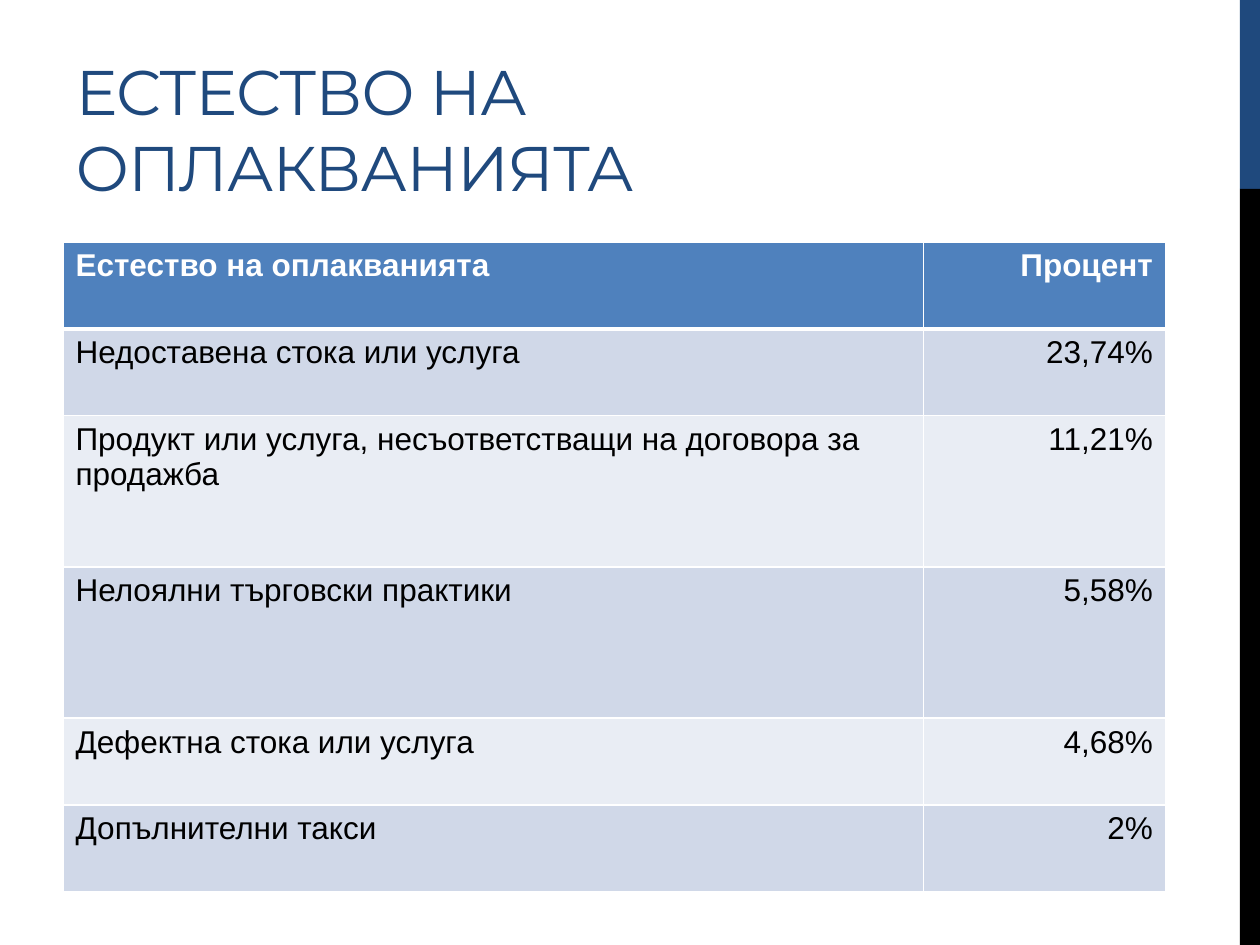
from lxml.etree import SubElement
from pptx import Presentation
from pptx.dml.color import RGBColor
from pptx.enum.shapes import MSO_SHAPE as Shape
from pptx.enum.text import MSO_ANCHOR as Anchor, MSO_AUTO_SIZE as AutoSize, PP_ALIGN as Align
from pptx.oxml.ns import qn
from pptx.util import Inches, Pt

NAVY, BLACK, WHITE = "1F497D", "000000", "FFFFFF"
HEADER, BANDS = "4F81BD", ("D0D8E8", "E9EDF4")
WIDTH, HEIGHT = 10, 7.5
COLUMNS = (6.83, 1.92)
SHORT, TALL = 0.69, 1.2
TITLE = "ЕСТЕСТВО НА ОПЛАКВАНИЯТА"
COMPLAINTS = (
    (SHORT, "Естество на оплакванията", "Процент"),
    (SHORT, "Недоставена стока или услуга", "23,74%"),
    (TALL, "Продукт или услуга, несъответстващи на договора за продажба", "11,21%"),
    (TALL, "Нелоялни търговски практики", "5,58%"),
    (SHORT, "Дефектна стока или услуга", "4,68%"),
    (SHORT, "Допълнителни такси", "2%"),
)


def paint(fill, color):
    fill.solid()
    fill.fore_color.rgb = RGBColor.from_string(color)


def set_font(para, name, size, color, bold=False):
    font = para.font
    font.name, font.size, font.bold = name, Pt(size), bold
    font.color.rgb = RGBColor.from_string(color)


def add_side_band(page, left, top, width, height):
    split = height / 5
    for start, length, color in ((0, split, NAVY), (split, height - split, BLACK)):
        box = page.shapes.add_shape(
            Shape.RECTANGLE, *map(Inches, (left, top + start, width, length)))
        box.shadow.inherit = False
        paint(box.fill, color)
        box.line.fill.background()


def place_title(page, left, top, width, height):
    title = page.shapes.title
    title.left, title.top, title.width, title.height = map(Inches, (left, top, width, height))
    frame = title.text_frame
    frame.text = TITLE
    frame.word_wrap = True
    frame.auto_size = AutoSize.NONE
    frame.vertical_anchor = Anchor.BOTTOM
    para = frame.paragraphs[0]
    para.alignment = Align.LEFT
    set_font(para, "Montserrat", 36, NAVY)
    para.runs[0].font._element.set("spc", "-60")


def add_borders(cell, top, bottom):
    properties = cell._tc.get_or_add_tcPr()
    for side, weight in (("L", 1), ("R", 1), ("T", top), ("B", bottom)):
        line = SubElement(properties, qn(f"a:ln{side}"), w=str(Pt(weight)))
        solid = SubElement(line, qn("a:solidFill"))
        SubElement(solid, qn("a:srgbClr"), val=WHITE)


def add_complaints(page, left, top):
    heights = [row[0] for row in COMPLAINTS]
    box = (left, top, sum(COLUMNS), sum(heights))
    table = page.shapes.add_table(len(COMPLAINTS), len(COLUMNS), *map(Inches, box)).table
    for column, width in zip(table.columns, COLUMNS):
        column.width = Inches(width)
    for index, (height, *texts) in enumerate(COMPLAINTS):
        table.rows[index].height = Inches(height)
        heading = index == 0
        for place, text in enumerate(texts):
            cell = table.cell(index, place)
            add_borders(cell, 3 if index == 1 else 1, 3 if heading else 1)
            paint(cell.fill, HEADER if heading else BANDS[(index - 1) % 2])
            cell.text = text
            para = cell.text_frame.paragraphs[0]
            para.alignment = (Align.LEFT, Align.RIGHT)[place]
            set_font(para, "Arial", 18, WHITE if heading else BLACK, heading)


def main():
    deck = Presentation()
    deck.slide_width, deck.slide_height = Inches(WIDTH), Inches(HEIGHT)
    page = deck.slides.add_slide(deck.slide_layouts[5])
    margin, band = WIDTH / 20, 0.16
    add_side_band(page, WIDTH - band, 0, band, HEIGHT)
    place_title(page, margin, 0.17, 6.33, HEIGHT / 5)
    add_complaints(page, margin, 1.92)
    deck.save("out.pptx")


if __name__ == "__main__":
    main()
